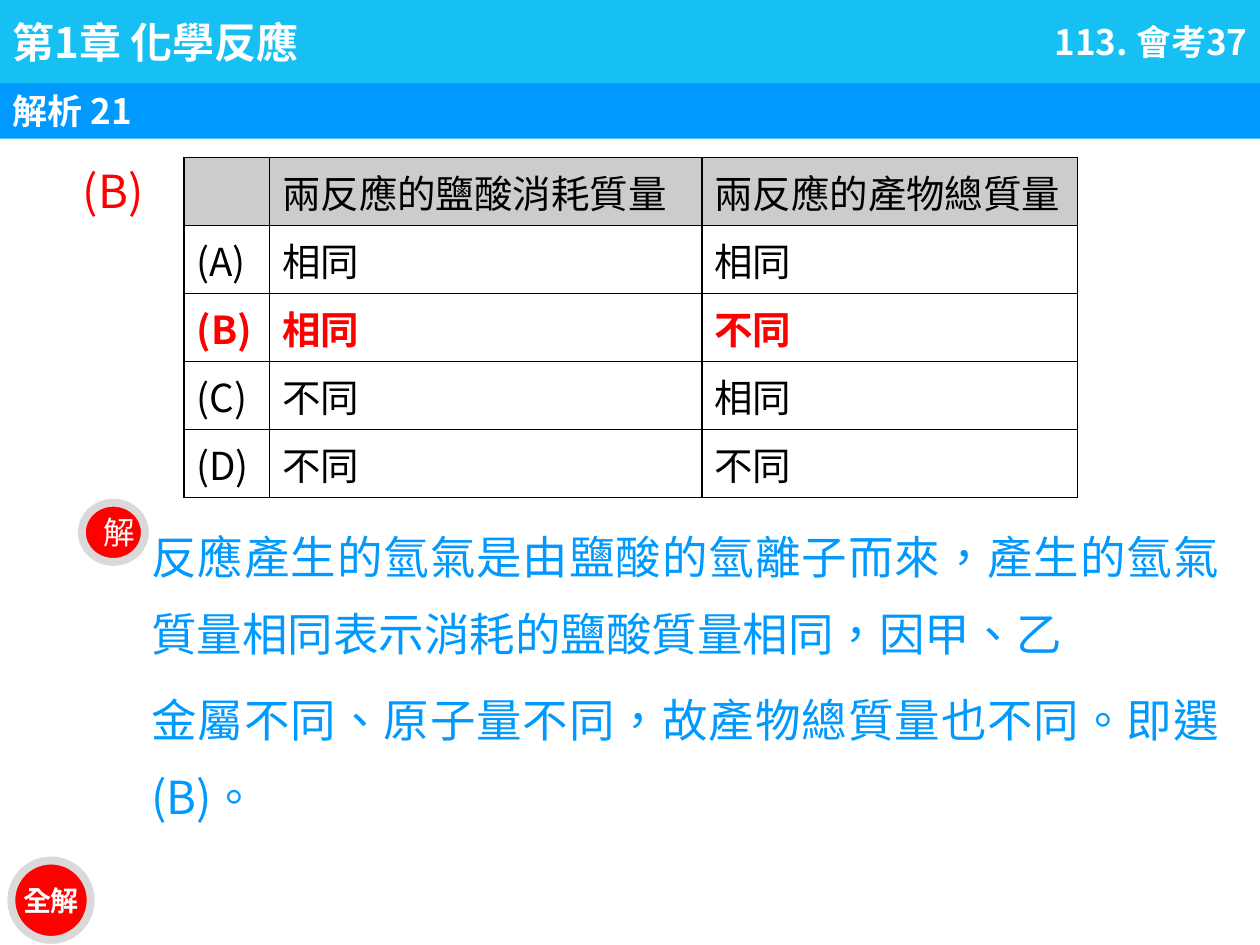
import dataclasses

import lxml.etree
import pptx
import pptx.dml.color
import pptx.enum.shapes
import pptx.enum.text
import pptx.oxml
import pptx.oxml.ns
import pptx.util

Align = pptx.enum.text.PP_ALIGN
Anchor = pptx.enum.text.MSO_ANCHOR
Preset = pptx.enum.shapes.MSO_SHAPE

SLIDE_W = pptx.util.Inches(10)
SLIDE_H = pptx.util.Inches(7.5)
COLUMN = SLIDE_W / 100
ROW = SLIDE_H / 75


@dataclasses.dataclass(frozen=True)
class Theme:
    font: str = "Noto Sans CJK SC"
    badge_font: str = "Noto Sans CJK JP"
    chapter_bar: str = "17C0F2"
    blue: str = "0099FF"
    red: str = "FF0000"
    ring: str = "D9D9D9"
    header_fill: str = "CCCCCC"
    white: str = "FFFFFF"
    black: str = "000000"
    chapter_size: int = 24
    heading_size: int = 20
    answer_size: int = 26
    table_size: int = 22
    small_badge_size: int = 18
    badge_size: int = 16
    line_pitch: int = 44
    paragraph_gap: int = 5


THEME = Theme()

OPTIONS = [
    ("", "兩反應的鹽酸消耗質量", "兩反應的產物總質量"),
    ("(A)", "相同", "相同"),
    ("(B)", "相同", "不同"),
    ("(C)", "不同", "相同"),
    ("(D)", "不同", "不同"),
]
CORRECT_ROW = 2
OPTION_WIDTHS = (6.8, 34.3, 29.8)
OPTION_ROW_HEIGHT = 5.4

EXPLANATION = [
    "反應產生的氫氣是由鹽酸的氫離子而來，產生的氫氣質量相同表示消耗的鹽酸質量相同，因甲、乙",
    "金屬不同、原子量不同，故產物總質量也不同。即選(B)。",
]


def rgb(code):
    return pptx.dml.color.RGBColor.from_string(code)


def place(left, top, width, height):
    """Turn grid columns and rows into lengths."""
    return (round(left * COLUMN), round(top * ROW),
            round(width * COLUMN), round(height * ROW))


def move(placeholder, area):
    (placeholder.left, placeholder.top,
     placeholder.width, placeholder.height) = area


def write(paragraph, words, size, color, bold=False, align=Align.LEFT, font=THEME.font):
    paragraph.alignment = align
    run = paragraph.add_run()
    run.text = words
    run.font.name = font
    run.font.size = pptx.util.Pt(size)
    run.font.bold = bold
    run.font.color.rgb = rgb(color)
    properties = run.font._element
    properties.set("lang", "zh-TW")
    east_asian = lxml.etree.SubElement(properties, pptx.oxml.ns.qn("a:ea"))
    east_asian.set("typeface", font)


def add_chapter_title(slide, words):
    title = slide.shapes.title
    move(title, place(0, 0, 100, 6.6))
    title.fill.solid()
    title.fill.fore_color.rgb = rgb(THEME.chapter_bar)
    title.text_frame.auto_size = pptx.enum.text.MSO_AUTO_SIZE.NONE
    title.text_frame.vertical_anchor = Anchor.MIDDLE
    write(title.text_frame.paragraphs[0], words, THEME.chapter_size, THEME.white, bold=True)


def add_explanation(slide, sentences):
    body = slide.placeholders[1]
    move(body, place(11, 39.7, 86.8, 26))
    frame = body.text_frame
    frame.auto_size = pptx.enum.text.MSO_AUTO_SIZE.NONE
    for index, sentence in enumerate(sentences):
        paragraph = frame.add_paragraph() if index else frame.paragraphs[0]
        properties = paragraph._p.get_or_add_pPr()
        properties.set("marL", "0")
        properties.set("indent", "0")
        lxml.etree.SubElement(properties, pptx.oxml.ns.qn("a:buNone"))
        paragraph.line_spacing = pptx.util.Pt(THEME.line_pitch)
        paragraph.space_before = pptx.util.Pt(THEME.paragraph_gap if index else 0)
        write(paragraph, sentence, THEME.answer_size, THEME.blue, align=Align.JUSTIFY)


def add_label(slide, area, words, size, color, anchor=Anchor.TOP, pitch=None, **style):
    frame = slide.shapes.add_textbox(*area).text_frame
    frame.word_wrap = True
    frame.vertical_anchor = anchor
    paragraph = frame.paragraphs[0]
    if pitch:
        paragraph.line_spacing = pptx.util.Pt(pitch)
    write(paragraph, words, size, color, **style)


def add_filled_shape(slide, preset, area, fill, words, size, ring=None, inset=None, **style):
    shape = slide.shapes.add_shape(preset, *area)
    shape.shadow.inherit = False
    shape.fill.solid()
    shape.fill.fore_color.rgb = rgb(fill)
    if ring:
        shape.line.color.rgb = rgb(ring)
        shape.line.width = pptx.util.Pt(4.5)
    else:
        shape.line.fill.background()
    frame = shape.text_frame
    frame.vertical_anchor = Anchor.MIDDLE
    if inset is not None:
        frame.margin_left = frame.margin_right = inset
        frame.margin_top = frame.margin_bottom = inset
    write(frame.paragraphs[0], words, size, THEME.white, **style)


def add_badge(slide, area, words, size, **style):
    add_filled_shape(slide, Preset.OVAL, area, THEME.red, words, size,
                     ring=THEME.ring, align=Align.CENTER, **style)


def outline(cell):
    properties = cell._tc.get_or_add_tcPr()
    for side in ("lnL", "lnR", "lnT", "lnB"):
        properties.append(pptx.oxml.parse_xml(
            f'<a:{side} {pptx.oxml.ns.nsdecls("a")} w="12700"><a:solidFill>'
            f'<a:srgbClr val="{THEME.black}"/></a:solidFill></a:{side}>'))


def add_options_table(slide):
    area = place(14.6, 12.5, sum(OPTION_WIDTHS), OPTION_ROW_HEIGHT * len(OPTIONS))
    table = slide.shapes.add_table(len(OPTIONS), len(OPTION_WIDTHS), *area).table
    table.horz_banding = False
    table.first_row = False
    for column, width in zip(table.columns, OPTION_WIDTHS):
        column.width = round(width * COLUMN)
    for row, option in enumerate(OPTIONS):
        table.rows[row].height = round(OPTION_ROW_HEIGHT * ROW)
        correct = row == CORRECT_ROW
        for column, words in enumerate(option):
            cell = table.cell(row, column)
            outline(cell)
            if row == 0:
                cell.fill.solid()
                cell.fill.fore_color.rgb = rgb(THEME.header_fill)
            else:
                cell.fill.background()
            if words:
                write(cell.text_frame.paragraphs[0], words, THEME.table_size,
                      THEME.red if correct else THEME.black, bold=correct)


def main():
    deck = pptx.Presentation()
    deck.slide_width, deck.slide_height = SLIDE_W, SLIDE_H
    slide = deck.slides.add_slide(deck.slide_layouts[1])

    add_chapter_title(slide, "第1章 化學反應")
    add_label(slide, place(5.6, 10.7, 94.4, 6.8), "(B)", THEME.answer_size,
              THEME.red, pitch=THEME.line_pitch)
    add_filled_shape(slide, Preset.RECTANGLE, place(0, 6.6, 100, 4.4), THEME.blue,
                     "解析 21", THEME.heading_size, bold=True)
    add_explanation(slide, EXPLANATION)
    add_label(slide, place(75.6, 0, 24.4, 6.6), "113. 會考37", THEME.heading_size,
              THEME.white, anchor=Anchor.MIDDLE, bold=True, align=Align.RIGHT)
    add_badge(slide, place(0.9, 68.3, 6.3, 6.3), "全解", THEME.badge_size,
              inset=0, bold=True)
    add_badge(slide, place(6.5, 39.9, 5, 4.7), "解", THEME.small_badge_size,
              font=THEME.badge_font)
    add_options_table(slide)

    deck.save("out.pptx")


if __name__ == "__main__":
    main()
